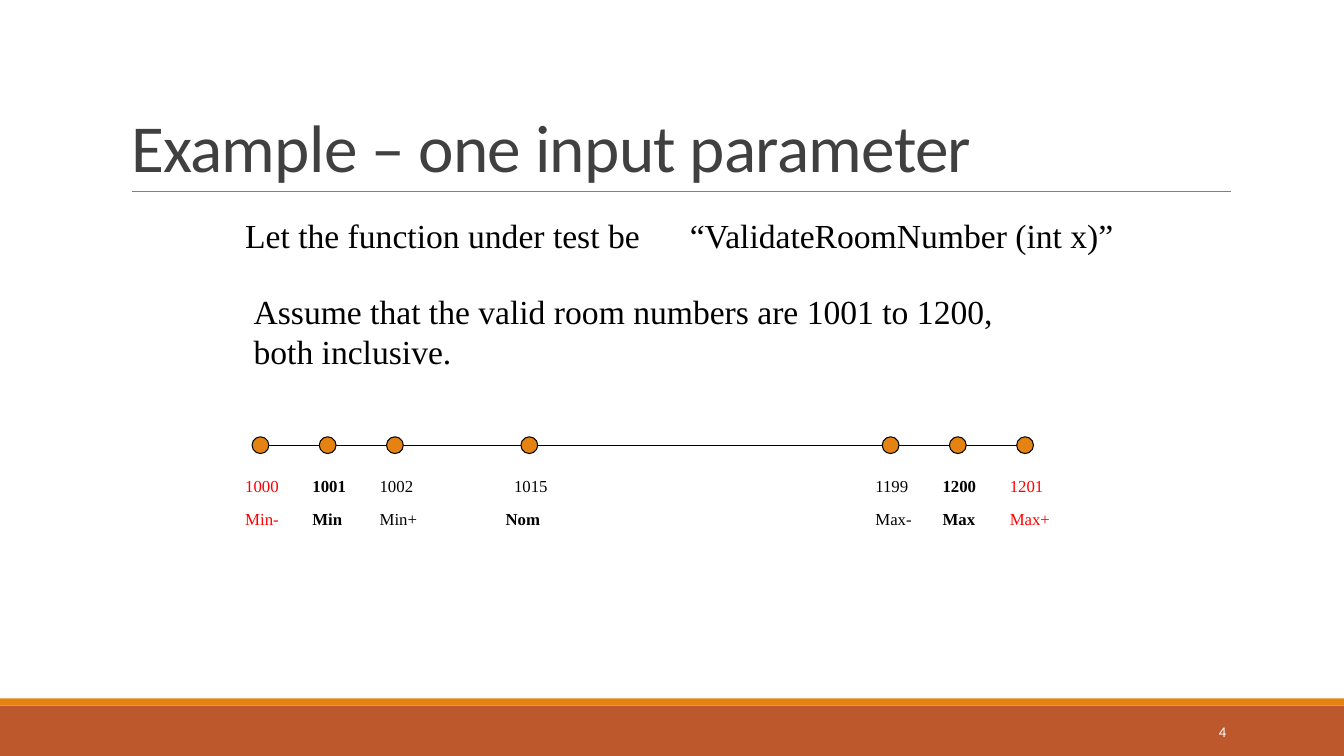
from dataclasses import dataclass

from lxml import etree
from pptx import Presentation
from pptx.dml.color import RGBColor
from pptx.enum.shapes import MSO_CONNECTOR, MSO_SHAPE
from pptx.enum.text import MSO_ANCHOR, PP_ALIGN
from pptx.oxml.ns import qn
from pptx.util import Inches, Pt

LINE = MSO_CONNECTOR.STRAIGHT
RECT, OVAL = MSO_SHAPE.RECTANGLE, MSO_SHAPE.OVAL
TOP, MID, LOW = MSO_ANCHOR.TOP, MSO_ANCHOR.MIDDLE, MSO_ANCHOR.BOTTOM
LEFT, RIGHT = PP_ALIGN.LEFT, PP_ALIGN.RIGHT

WIDE, HIGH = 13.33, 7.5
UNIT = 1 / 12  # grid step in inches


@dataclass(frozen=True)
class Theme:
    rust: str = "BD582C"
    amber: str = "E48312"
    grey: str = "808080"
    dark: str = "404040"
    ink: str = "000000"
    red: str = "FF0000"
    white: str = "FFFFFF"
    sans: str = "Calibri"
    serif: str = "Times New Roman"
    head: float = 48
    body: float = 24
    label: float = 12
    page: float = 10.5


THEME = Theme()

# grid steps from the first point, value, name, colour, bold, shift of the name
POINTS = [
    (0, "1000", "Min-", THEME.red, False, 0),
    (8, "1001", "Min", THEME.ink, True, 0),
    (16, "1002", "Min+", THEME.ink, False, 0),
    (32, "1015", "Nom", THEME.ink, False, -1),
    (75, "1199", "Max-", THEME.ink, False, 0),
    (83, "1200", "Max", THEME.ink, True, 0),
    (91, "1201", "Max+", THEME.red, False, 0),
]


def rgb(code):
    return RGBColor.from_string(code)


def grid(*steps):
    return [step * UNIT for step in steps]


def put_text(slide, box, text, *, size, font=THEME.serif, color=THEME.ink,
             bold=False, align=LEFT, anchor=TOP, shape=None, lead=None,
             track=None, tab=None):
    """Write text in the given shape, or in a new text box; box is in inches."""
    place = [Inches(v) for v in box]
    if shape is None:
        shape = slide.shapes.add_textbox(*place)
    shape.left, shape.top, shape.width, shape.height = place
    frame = shape.text_frame
    frame.word_wrap = True
    frame.vertical_anchor = anchor
    para = frame.paragraphs[0]
    para.alignment = align
    if lead:
        para.line_spacing = lead
    run = para.add_run()
    run.text = text
    run.font.name, run.font.size, run.font.bold = font, Pt(size), bold
    run.font.color.rgb = rgb(color)
    if track:
        run.font._element.set("spc", str(int(track * 100)))
    if tab:
        stops = etree.SubElement(para._p.get_or_add_pPr(), qn("a:tabLst"))
        etree.SubElement(stops, qn("a:tab"), pos=str(Inches(tab)), algn="l")


def put_shape(slide, kind, box, fill, line=None):
    shape = slide.shapes.add_shape(kind, *[Inches(v) for v in box])
    shape.shadow.inherit = False
    shape.fill.solid()
    shape.fill.fore_color.rgb = rgb(fill)
    if line:
        shape.line.color.rgb = rgb(line)
        shape.line.width = Pt(0.75)
    else:
        shape.line.fill.background()


def put_rule(slide, left, right, y, color, width):
    rule = slide.shapes.add_connector(LINE, *[Inches(v) for v in (left, y, right, y)])
    rule.line.color.rgb = rgb(color)
    rule.line.width = Pt(width)
    etree.SubElement(rule._element.spPr, qn("a:effectLst"))


def add_foot(slide, box, page):
    left, top, width, height = box
    stripe = 0.07
    put_shape(slide, RECT, (left, top + stripe, width, height - stripe), THEME.rust)
    put_shape(slide, RECT, (left, top, width, stripe), THEME.amber)
    put_text(slide, (left + width - 2.5, top + 0.13, 1.43, 0.4), page,
             size=THEME.page, font=THEME.sans, color=THEME.white,
             align=RIGHT, anchor=MID)


def add_title(slide, box, text):
    left, top, width, height = box
    put_rule(slide, left + 0.11, left + width + 0.01, top + height, THEME.grey, 0.5)
    put_text(slide, box, text, shape=slide.shapes.title, size=THEME.head,
             font=THEME.sans, color=THEME.dark, anchor=LOW, lead=0.85, track=-0.5)


def add_intro(slide, box):
    left, top, width, height = box
    put_text(slide, (left, top, width, 0.5),
             "Let the function under test be\t“ValidateRoomNumber (int x)”",
             size=THEME.body, tab=4.41)
    put_text(slide, (left + UNIT, top + 9 * UNIT, width - 8 * UNIT, height - 9 * UNIT),
             "Assume that the valid room numbers are 1001 to 1200, both inclusive.",
             size=THEME.body)


def add_scale(slide, box):
    """Draw the number line, its points and two rows of labels below."""
    left, top, width, _ = box
    put_rule(slide, left, left + width, top + UNIT, THEME.ink, 0.75)
    for step, value, name, color, bold, shift in POINTS:
        x = left + step * UNIT
        put_shape(slide, OVAL, (x - UNIT, top, 2 * UNIT, 2 * UNIT),
                  THEME.amber, THEME.ink)
        style = {"size": THEME.label, "color": color}
        put_text(slide, (x - 3 * UNIT, top + 4 * UNIT, 8 * UNIT, 0.3), value,
                 bold=bold, **style)
        put_text(slide, (x + (shift - 3) * UNIT, top + 8 * UNIT, 8 * UNIT, 0.3), name,
                 bold=bold or name == "Nom", **style)


def main():
    deck = Presentation()
    deck.slide_width, deck.slide_height = Inches(WIDE), Inches(HIGH)
    slide = deck.slides.add_slide(deck.slide_layouts.get_by_name("Title Only"))
    add_foot(slide, (0, 6.93, WIDE, HIGH - 6.93), "4")
    add_title(slide, (1.2, 0.31, 11, 1.59), "Example – one input parameter")
    add_intro(slide, grid(28, 25, 106, 20))
    add_scale(slide, grid(31, 52, 91, 12))
    deck.save("out.pptx")


if __name__ == "__main__":
    main()
